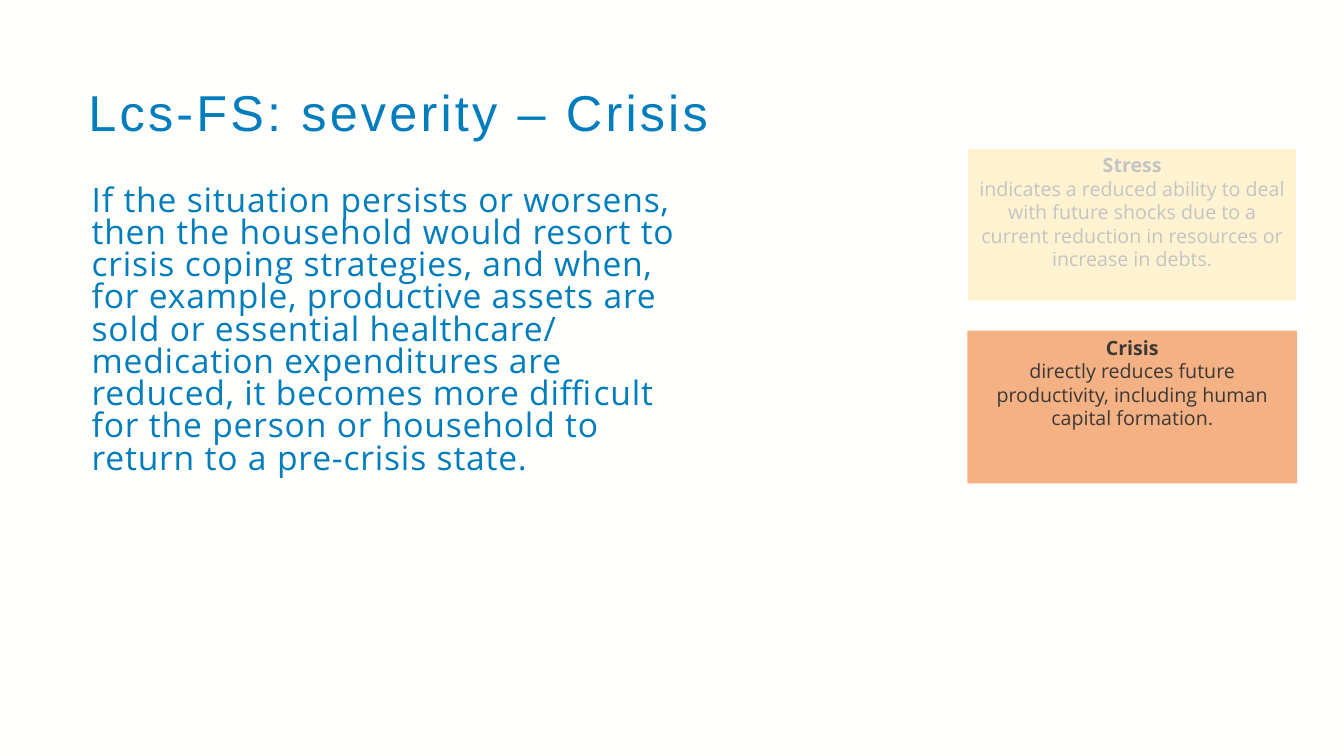
from lxml import etree
from pptx import Presentation
from pptx import util as u
from pptx.dml.color import RGBColor
from pptx.enum import shapes, text
from pptx.oxml.ns import qn

BLUE = "007DBC"
DARK = "3B3838"
CARD_LEFT, CARD_WIDTH = 24.38, 8.31
STRESS_TOP, CRISIS_TOP = 3.73, 8.33


def color(hex_code):
    return RGBColor.from_string(hex_code)


def add_run(paragraph, content, size, font, hex_code, bold=False, spacing=0):
    run = paragraph.add_run()
    run.text = content
    run.font.size = u.Pt(size)
    run.font.name = font
    run.font.bold = bold
    run.font.color.rgb = color(hex_code)
    if spacing:
        run.font._element.set("spc", str(round(spacing * 100)))


def add_text(slide, box, content, size, font, spacing, line_spacing, anchor):
    shape = slide.shapes.add_textbox(*map(u.Cm, box))
    frame = shape.text_frame
    frame.word_wrap = True
    frame.vertical_anchor = anchor
    paragraph = frame.paragraphs[0]
    paragraph.line_spacing = line_spacing
    add_run(paragraph, content, size, font, BLUE, spacing=spacing)


def add_rectangle(slide, top, height, fill):
    shape = slide.shapes.add_shape(
        shapes.MSO_SHAPE.RECTANGLE,
        *map(u.Cm, (CARD_LEFT, top, CARD_WIDTH, height)))
    shape.shadow.inherit = False
    shape.fill.solid()
    shape.fill.fore_color.rgb = color(fill)
    shape.line.fill.background()
    return shape


def add_card(slide, top, fill, heading, parts):
    frame = add_rectangle(slide, top, 3.85, fill).text_frame
    frame.word_wrap = True
    frame.vertical_anchor = text.MSO_ANCHOR.TOP
    title, body = frame.paragraphs[0], frame.add_paragraph()
    title.alignment = body.alignment = text.PP_ALIGN.CENTER
    add_run(title, heading, 14, "Open Sans", DARK, bold=True)
    for content, font in parts:
        add_run(body, content, 14, font, DARK)


def add_veil(slide, top, height, opacity):
    shape = add_rectangle(slide, top, height, "FFFFFF")
    fill_color = shape._element.spPr.find(qn("a:solidFill"))[0]
    etree.SubElement(fill_color, qn("a:alpha"), val=str(opacity * 1000))
    shape.line.color.rgb = color("FFFFFF")
    shape.line.width = u.Pt(1)


def main():
    presentation = Presentation()
    presentation.slide_width = u.Cm(33.87)
    presentation.slide_height = u.Cm(19.05)
    slide = presentation.slides.add_slide(presentation.slide_layouts[6])
    slide.background.fill.solid()
    slide.background.fill.fore_color.rgb = color("FFFFFE")

    add_text(slide, (1.98, 1.98, 30.71, 1.83), "Lcs-FS: severity – Crisis",
             36, "Arial", 2.3, 0.9, text.MSO_ANCHOR.MIDDLE)
    add_text(slide, (2.06, 4.57, 16, 10.85),
             "If the situation persists or worsens, then the household would "
             "resort to crisis coping strategies, and when, for example, "
             "productive assets are sold or essential healthcare/ medication "
             "expenditures are reduced, it becomes more difficult for the "
             "person or household to return to a pre-crisis state.",
             24, "Open Sans", 0.6, 0.8, text.MSO_ANCHOR.TOP)

    add_card(slide, STRESS_TOP, "FFD966", "Stress", [
        ("indicates a reduced ability to deal with future shocks due to a "
         "current reduction in resources or increase in debts.", "Open Sans")])
    add_card(slide, CRISIS_TOP, "F4B183", "Crisis", [
        ("directly reduces future productivity, including human capital "
         "formation", "Open Sans"),
        (".", "Calibri")])
    add_veil(slide, STRESS_TOP, 3.99, 70)

    presentation.save("out.pptx")


if __name__ == "__main__":
    main()
